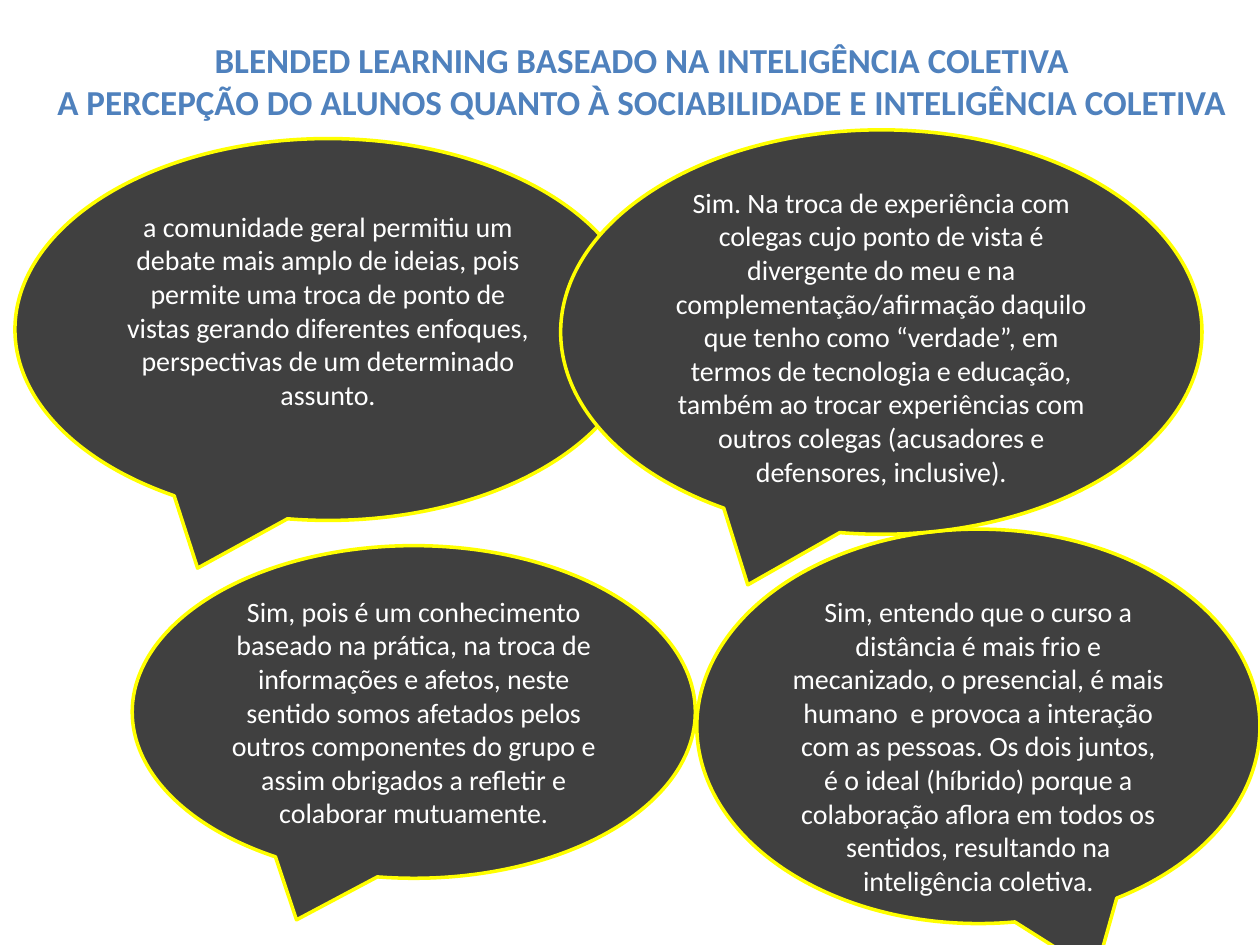
from dataclasses import dataclass

from pptx import Presentation
from pptx.dml.color import RGBColor
from pptx.enum.shapes import MSO_SHAPE as Shape
from pptx.enum.text import MSO_ANCHOR as Anchor, MSO_AUTO_SIZE as AutoSize, PP_ALIGN as Align
from pptx.slide import Slide
from pptx.text.text import _Paragraph as Paragraph
from pptx.util import Pt

FONT = "Calibri"
TITLE_BLUE = "4F81BD"
BUBBLE_GREY = "404040"
OUTLINE_YELLOW = "FFFF00"
QUOTE_WHITE = "FFFFFF"
TAIL_X, TAIL_Y = 0.20833, 0.625
INSET = 3.6

TITLE_LINES = (
    "BLENDED LEARNING BASEADO NA INTELIGÊNCIA COLETIVA",
    "A PERCEPÇÃO DO ALUNOS QUANTO À SOCIABILIDADE E INTELIGÊNCIA COLETIVA",
)


@dataclass(frozen=True)
class Bubble:
    """A student's quote; lengths in points, extra insets shift the text."""
    left: float
    top: float
    width: float
    height: float
    quote: str
    extra_top: float = 0
    extra_bottom: float = 0
    tail_on_right: bool = False


BUBBLES = (
    Bubble(8.6, 79.2, 357.8, 218.2,
           "a comunidade geral permitiu um debate mais amplo de ideias, pois "
           "permite uma troca de ponto de vistas gerando diferentes enfoques, "
           "perspectivas de um determinado assunto.",
           extra_bottom=22),
    Bubble(75.6, 311.8, 321.8, 190.1,
           "Sim, pois é um conhecimento baseado na prática, na troca de "
           "informações e afetos, neste sentido somos afetados pelos outros "
           "componentes do grupo e assim obrigados a refletir e colaborar "
           "mutuamente."),
    Bubble(398.2, 302.4, 321.8, 225.4,
           "Sim, entendo que o curso a distância é mais frio e mecanizado, o "
           "presencial, é mais humano  e provoca a interação com as pessoas. "
           "Os dois juntos, é o ideal (híbrido) porque a colaboração aflora em "
           "todos os sentidos, resultando na inteligência coletiva.",
           extra_top=22, tail_on_right=True),
    Bubble(320.4, 74.2, 366.5, 231.1,
           "Sim. Na troca de experiência com colegas cujo ponto de vista é "
           "divergente do meu e na complementação/afirmação daquilo que tenho "
           "como “verdade”, em termos de tecnologia e educação, também ao "
           "trocar experiências com outros colegas (acusadores e defensores, "
           "inclusive).",
           extra_top=5),
)


def color(hex_value: str) -> RGBColor:
    return RGBColor.from_string(hex_value)


def write(paragraph: Paragraph, text: str, size: float, hex_value: str,
          bold: bool = False) -> None:
    paragraph.text = text
    paragraph.alignment = Align.CENTER
    font = paragraph.font
    font.name = FONT
    font.size = Pt(size)
    font.bold = bold
    font.color.rgb = color(hex_value)


def add_title(slide: Slide) -> None:
    title = slide.shapes.add_textbox(Pt(23.8), Pt(18.7), Pt(686.2), Pt(55.4))
    frame = title.text_frame
    frame.word_wrap = False
    frame.auto_size = AutoSize.SHAPE_TO_FIT_TEXT
    for index, line in enumerate(TITLE_LINES):
        paragraph = frame.add_paragraph() if index else frame.paragraphs[0]
        write(paragraph, line, 20, TITLE_BLUE, bold=True)


def add_bubble(slide: Slide, bubble: Bubble) -> None:
    callout = slide.shapes.add_shape(
        Shape.OVAL_CALLOUT, Pt(bubble.left), Pt(bubble.top),
        Pt(bubble.width), Pt(bubble.height))
    callout.adjustments[0] = TAIL_X if bubble.tail_on_right else -TAIL_X
    callout.adjustments[1] = TAIL_Y
    callout.shadow.inherit = False
    callout.fill.solid()
    callout.fill.fore_color.rgb = color(BUBBLE_GREY)
    callout.line.color.rgb = color(OUTLINE_YELLOW)
    callout.line.width = Pt(2)

    frame = callout.text_frame
    frame.word_wrap = True
    frame.vertical_anchor = Anchor.MIDDLE
    frame.margin_top = Pt(INSET + bubble.extra_top)
    frame.margin_bottom = Pt(INSET + bubble.extra_bottom)
    write(frame.paragraphs[0], bubble.quote, 16, QUOTE_WHITE)


def main() -> None:
    presentation = Presentation()
    presentation.slide_width = Pt(720)
    presentation.slide_height = Pt(540)
    slide = presentation.slides.add_slide(presentation.slide_layouts[6])
    add_title(slide)
    for bubble in BUBBLES:
        add_bubble(slide, bubble)
    presentation.save("out.pptx")


if __name__ == "__main__":
    main()
